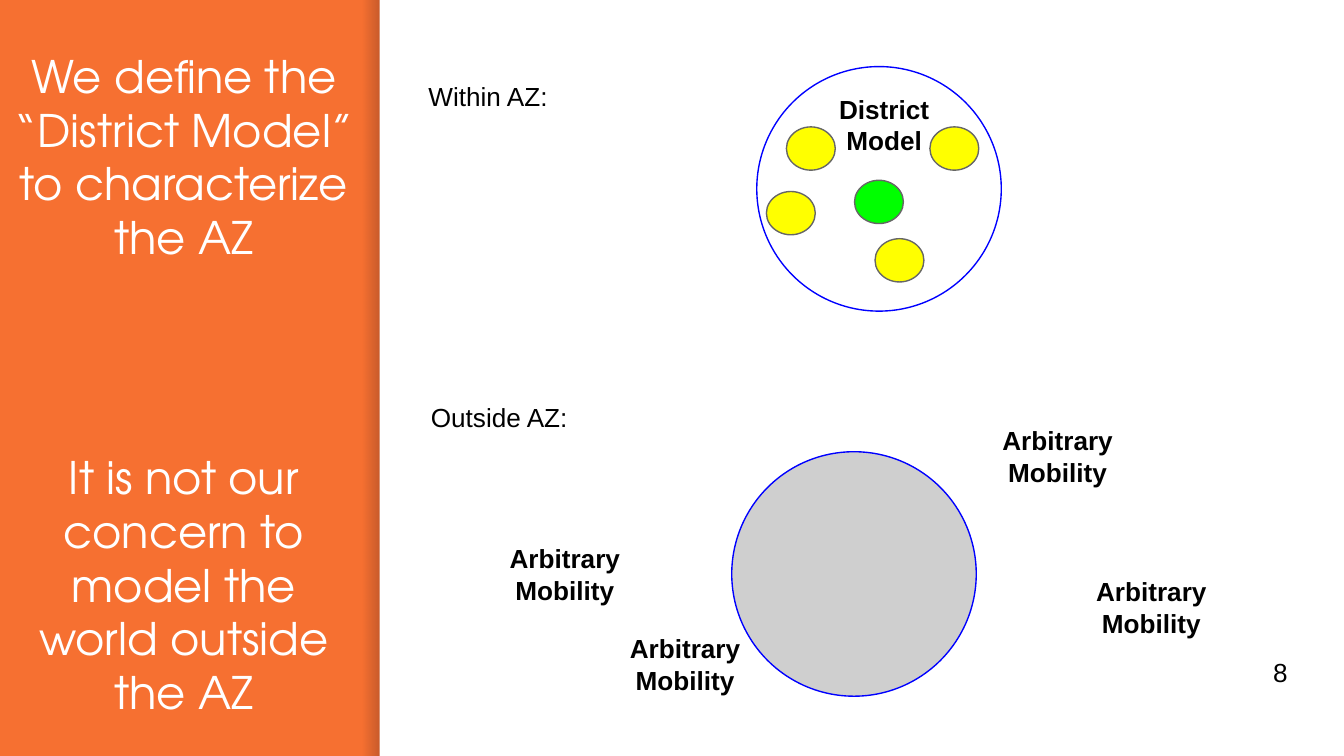
from lxml.etree import SubElement
from pptx import Presentation
from pptx.dml.color import RGBColor
from pptx.enum.shapes import MSO_SHAPE
from pptx.enum.text import MSO_ANCHOR, MSO_AUTO_SIZE, PP_ALIGN
from pptx.oxml.ns import qn
from pptx.util import Pt


def color(code):
    return RGBColor.from_string(code)


class Deck:
    font, size = "Arial", 14
    head, large = "TeX Gyre Adventor", 24
    inset = 7.2

    def __init__(self, wide, high, back):
        self.prs = Presentation()
        self.prs.slide_width, self.prs.slide_height = Pt(wide), Pt(high)
        self.slide = self.prs.slides.add_slide(self.prs.slide_layouts[0])
        fill = self.slide.background.fill
        fill.solid()
        fill.fore_color.rgb = color(back)

    def letter(self, shape, text, font, size, ink, bold, align, anchor):
        frame = shape.text_frame
        frame.text = text
        frame.word_wrap = True
        frame.auto_size = MSO_AUTO_SIZE.NONE
        frame.vertical_anchor = anchor
        frame.margin_left = frame.margin_right = Pt(self.inset)
        frame.margin_top = frame.margin_bottom = Pt(self.inset)
        para = frame.paragraphs[0]
        para.alignment = align
        para.space_before = Pt(0)
        run = para.runs[0].font
        run.name, run.size, run.bold = font, Pt(size), bold
        run.color.rgb = color(ink)

    def title(self, index, text, x, y, w, h):
        shape = self.slide.placeholders[index]
        shape.left, shape.top, shape.width, shape.height = map(Pt, (x, y, w, h))
        self.letter(shape, text, self.head, self.large, "FFFFFF", False,
                    PP_ALIGN.CENTER, MSO_ANCHOR.TOP)

    def text(self, text, x, y, w, h, bold=False, anchor=MSO_ANCHOR.TOP):
        shape = self.slide.shapes.add_textbox(*map(Pt, (x, y, w, h)))
        align = PP_ALIGN.CENTER if bold else PP_ALIGN.LEFT
        self.letter(shape, text, self.font, self.size, "000000", bold, align, anchor)

    def shape(self, kind, x, y, w, h, fill=None, line=None):
        shape = self.slide.shapes.add_shape(kind, *map(Pt, (x, y, w, h)))
        shape.shadow.inherit = False
        if fill:
            shape.fill.solid()
            shape.fill.fore_color.rgb = color(fill)
        else:
            shape.fill.background()
        if line:
            shape.line.color.rgb = color(line)
            shape.line.width = Pt(0.75)
        else:
            shape.line.fill.background()
        return shape

    def oval(self, x, y, w, h, fill=None, line="666666"):
        self.shape(MSO_SHAPE.OVAL, x, y, w, h, fill, line)

    def panel(self, x, y, w, h, fill):
        return self.shape(MSO_SHAPE.RECTANGLE, x, y, w, h, fill)

    def shade(self, x, y, w, h, tint, alphas):
        fill = self.panel(x, y, w, h, tint).fill
        fill.gradient()
        fill.gradient_angle = 0
        for stop, alpha in zip(fill.gradient_stops, alphas):
            stop.color.rgb = color(tint)
            node = stop._gs.find(qn("a:srgbClr"))
            SubElement(node, qn("a:alpha")).set("val", str(alpha * 1000))


def main():
    deck = Deck(720, 405, "F67031")

    # Side band with soft edge, and white panel
    deck.shade(194.4, 0, 9, 405, "000014", (0, 20))
    deck.panel(203.4, 0, 516.6, 405, "FFFFFF")

    # Side statements
    deck.title(0, "We define the “District Model” to characterize the AZ",
               -2, 18.8, 201, 147.6)
    deck.title(1, "It is not our concern to model the world outside the AZ",
               -2, 233.8, 201, 147.6)

    # Within the zone: ring, green centre and yellow districts
    ring = 131
    deck.oval(405.4, 35.7, ring, ring, line="0000FF")
    deck.oval(457.8, 96.6, 26.2, 23.2, "00FF00")
    for x, y in ((421.3, 68), (410.6, 102.6), (468.8, 127.9), (498.2, 68)):
        deck.oval(x, y, 26.2, 23.2, "FFFF00")
    deck.text("Within AZ:", 222.4, 36, 306.8, 36)
    deck.text("District Model", 440.5, 42.8, 66.4, 48, bold=True)

    # Outside the zone: grey disc among free movement
    deck.text("Outside AZ:", 223.7, 207.6, 91, 36)
    deck.oval(392, 242, ring, ring, "CFCFCF", "0000FF")
    for x, y in ((247.2, 283.6), (561.4, 301.2), (511.2, 220.3), (311.6, 331.8)):
        deck.text("Arbitrary Mobility", x, y, 110.8, 48, bold=True)

    # Page number
    deck.text("8", 675, 344.4, 43.2, 31, anchor=MSO_ANCHOR.MIDDLE)

    deck.prs.save("out.pptx")


if __name__ == "__main__":
    main()
